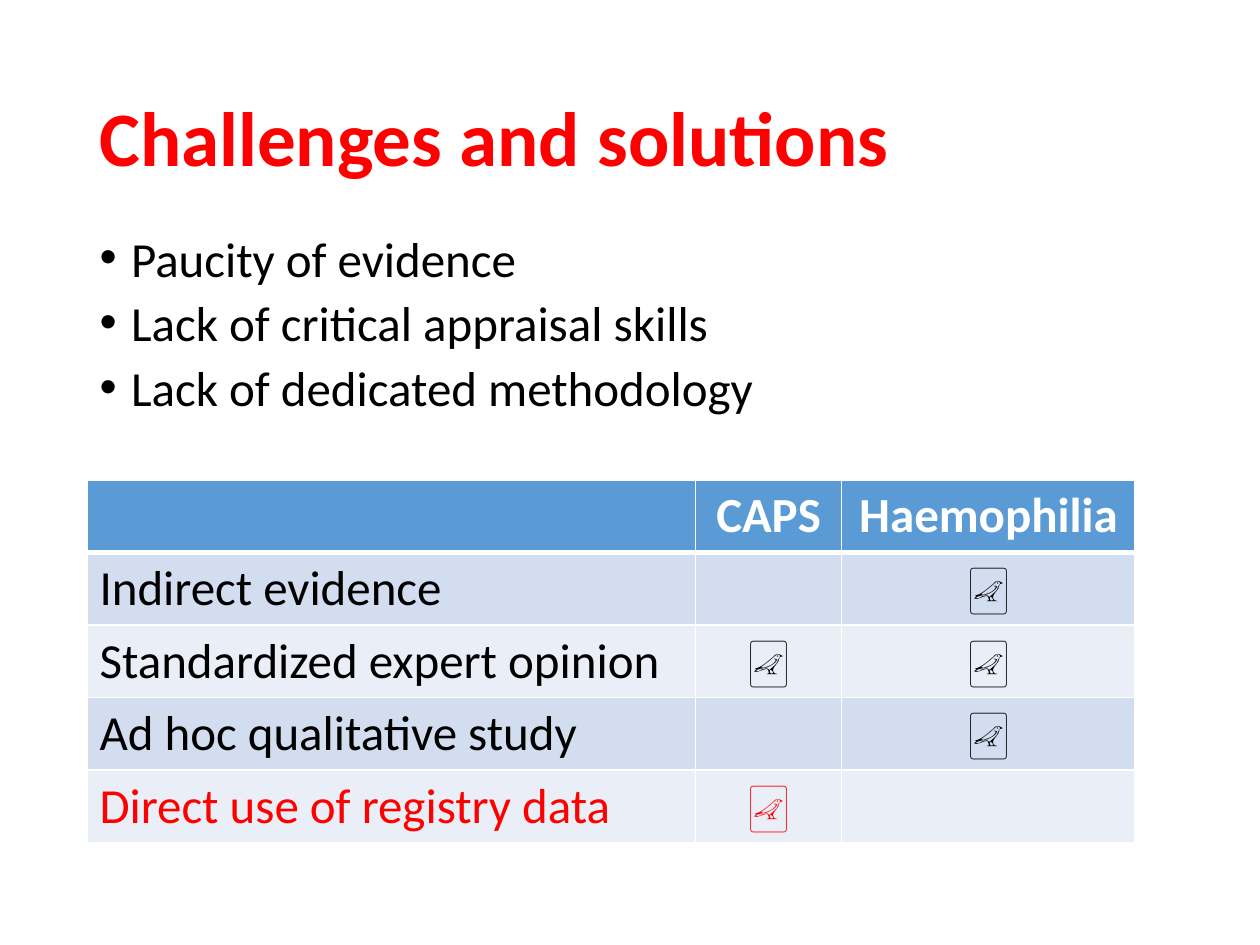
from lxml.etree import SubElement
from pptx import Presentation
from pptx.dml.color import RGBColor
from pptx.enum.text import MSO_ANCHOR, MSO_AUTO_SIZE, PP_ALIGN
from pptx.oxml.ns import qn
from pptx.util import Inches, Pt

COLORS = {
    "accent": "FF0000",
    "text": "000000",
    "white": "FFFFFF",
    "header": "5B9BD5",
    "odd_row": "D2DEEF",
    "even_row": "EAEFF7",
}
FONT = "Calibri"
TILE = "🀐"
CHALLENGES = [
    "Paucity of evidence",
    "Lack of critical appraisal skills",
    "Lack of dedicated methodology",
]
SOLUTIONS = [
    ("", "CAPS", "Haemophilia"),
    ("Indirect evidence", "", TILE),
    ("Standardized expert opinion", TILE, TILE),
    ("Ad hoc qualitative study", "", TILE),
    ("Direct use of registry data", TILE, ""),
]
COLUMN_WIDTHS = (4.83, 1.16, 2.33)
ROW_HEIGHT = 0.57


def rgb(name):
    """Return the named palette colour."""
    return RGBColor.from_string(COLORS[name])


def write(paragraph, text, size=28, color="text", bold=False,
          align=PP_ALIGN.LEFT, spacing=None, before=None):
    """Put formatted text into a paragraph."""
    paragraph.alignment = align
    if spacing is not None:
        paragraph.line_spacing = spacing
    if before is not None:
        paragraph.space_before = Pt(before)
    run = paragraph.add_run()
    run.text = text
    run.font.name = FONT
    run.font.size = Pt(size)
    run.font.bold = bold
    run.font.color.rgb = rgb(color)


def place(placeholder, box, anchor):
    """Move a placeholder to a box and return its text frame."""
    left, top, width, height = (Inches(length) for length in box)
    placeholder.left, placeholder.top = left, top
    placeholder.width, placeholder.height = width, height
    frame = placeholder.text_frame
    frame.auto_size = MSO_AUTO_SIZE.NONE
    frame.vertical_anchor = anchor
    return frame


def add_heading(slide, box):
    """Fill the title placeholder."""
    frame = place(slide.shapes.title, box, MSO_ANCHOR.MIDDLE)
    write(frame.paragraphs[0], "Challenges and solutions", size=44,
          color="accent", bold=True, spacing=0.9)


def add_challenges(slide, box):
    """Fill the body placeholder with the bulleted challenges."""
    frame = place(slide.placeholders[1], box, MSO_ANCHOR.TOP)
    for index, challenge in enumerate(CHALLENGES):
        paragraph = frame.add_paragraph() if index else frame.paragraphs[0]
        write(paragraph, challenge, spacing=0.8, before=10)
        properties = paragraph._p.get_or_add_pPr()
        properties.set("marL", str(Inches(0.25)))
        properties.set("indent", str(-Inches(0.25)))
        SubElement(properties, qn("a:buFont"), typeface="Arial")
        SubElement(properties, qn("a:buChar"), char="•")


def style_cell(cell, fill, bottom=1, top=1):
    """Give a cell white borders and a solid fill."""
    properties = cell._tc.get_or_add_tcPr()
    for side, width in (("L", 1), ("R", 1), ("T", top), ("B", bottom)):
        line = SubElement(properties, qn(f"a:ln{side}"), w=str(Pt(width)))
        solid = SubElement(line, qn("a:solidFill"))
        SubElement(solid, qn("a:srgbClr"), val=COLORS["white"])
    cell.fill.solid()
    cell.fill.fore_color.rgb = rgb(fill)


def add_solutions(slide, left, top):
    """Add the table of solutions for each disease."""
    table = slide.shapes.add_table(
        len(SOLUTIONS), len(COLUMN_WIDTHS), Inches(left), Inches(top),
        Inches(sum(COLUMN_WIDTHS)), Inches(ROW_HEIGHT * len(SOLUTIONS))).table
    for column, width in zip(table.columns, COLUMN_WIDTHS):
        column.width = Inches(width)
    last = len(SOLUTIONS) - 1
    for r, solution in enumerate(SOLUTIONS):
        header = r == 0
        fill = "header" if header else "odd_row" if r % 2 else "even_row"
        color = "white" if header else "accent" if r == last else "text"
        for c, text in enumerate(solution):
            cell = table.cell(r, c)
            style_cell(cell, fill, bottom=3 if header else 1,
                       top=3 if r == 1 else 1)
            if text:
                write(cell.text_frame.paragraphs[0], text, color=color,
                      bold=header,
                      align=PP_ALIGN.CENTER if c else PP_ALIGN.LEFT)


def main():
    """Build and save the slide."""
    deck = Presentation()
    deck.slide_width, deck.slide_height = Inches(10), Inches(7.5)
    slide = deck.slides.add_slide(deck.slide_layouts[1])
    add_heading(slide, (0.69, 0.4, 8.62, 1.45))
    add_challenges(slide, (0.69, 1.85, 8.62, 1.61))
    add_solutions(slide, 0.69, 3.81)
    deck.save("out.pptx")


if __name__ == "__main__":
    main()
